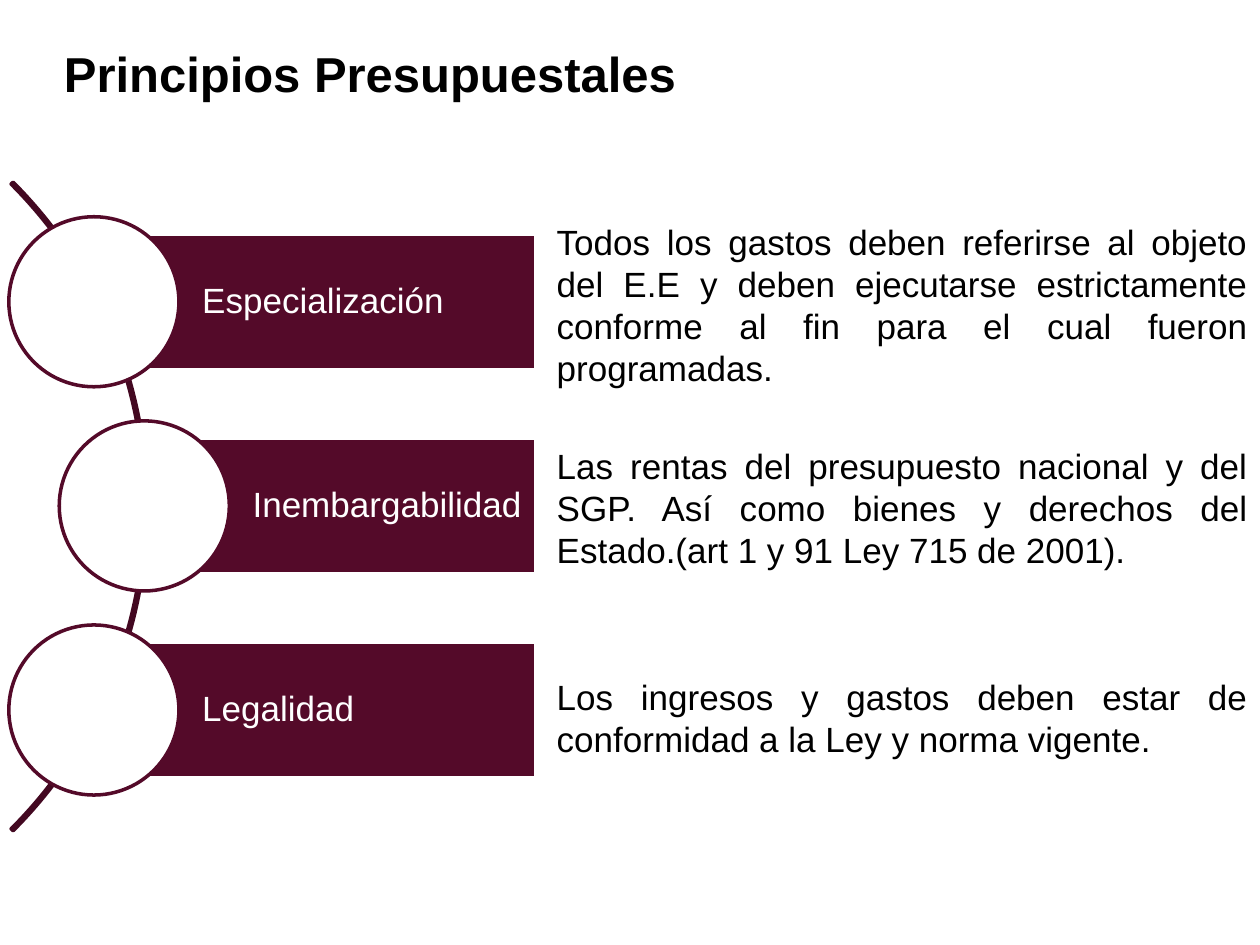
from pptx import Presentation
from pptx.dml.color import RGBColor
from pptx.enum.shapes import MSO_SHAPE
from pptx.enum.text import MSO_ANCHOR, PP_ALIGN
from pptx.util import Inches, Pt

ARC, RECT, OVAL = MSO_SHAPE.BLOCK_ARC, MSO_SHAPE.RECTANGLE, MSO_SHAPE.OVAL
MIDDLE, LEFT, JUSTIFY = MSO_ANCHOR.MIDDLE, PP_ALIGN.LEFT, PP_ALIGN.JUSTIFY

BLACK = RGBColor(0x00, 0x00, 0x00)
WHITE = RGBColor(0xFF, 0xFF, 0xFF)
WINE = RGBColor(0x54, 0x0A, 0x29)
DARK = RGBColor(0x43, 0x08, 0x21)

# Label, left of its circle, explanation, points before the explanation
ITEMS = [
    ("Especialización", 0.07,
     "Todos los gastos deben referirse al objeto del E.E y deben ejecutarse "
     "estrictamente conforme al fin para el cual fueron programadas.", 0),
    ("Inembargabilidad", 0.47,
     "Las rentas del presupuesto nacional y del SGP. Así como bienes y "
     "derechos del Estado.(art 1 y 91 Ley 715 de 2001).", 32),
    ("Legalidad", 0.07,
     "Los ingresos y gastos deben estar de conformidad a la Ley y norma "
     "vigente.", 60),
]
TOP, STEP = 1.72, 1.62
SIZE, HIGH, RIGHT = 1.35, 1.08, 4.25


def add_shape(kind, x, y, w, h, fill, line):
    shape = slide.shapes.add_shape(kind, Inches(x), Inches(y), Inches(w), Inches(h))
    shape.shadow.inherit = False
    if fill is None:
        shape.fill.background()
    else:
        shape.fill.solid()
        shape.fill.fore_color.rgb = fill
    shape.line.color.rgb = line
    shape.line.width = Pt(2)
    return shape


def set_font(para, size, color, bold=False):
    for run in para.runs:
        run.font.name = "Arial"
        run.font.size = Pt(size)
        run.font.color.rgb = color
        run.font.bold = bold


prs = Presentation()
prs.slide_width, prs.slide_height = Inches(10), Inches(7.5)
slide = prs.slides.add_slide(prs.slide_layouts[6])

# Title
title = slide.shapes.add_textbox(Inches(0.41), Inches(0.13), Inches(9), Inches(0.9))
frame = title.text_frame
frame.word_wrap = True
frame.vertical_anchor = MIDDLE
frame.text = "Principios Presupuestales"
set_font(frame.paragraphs[0], 28, BLACK, True)

# Explanations
notes = slide.shapes.add_textbox(Inches(4.32), Inches(1.7), Inches(5.68), Inches(4.48))
body = notes.text_frame
body.word_wrap = True
for i, (_, _, text, gap) in enumerate(ITEMS):
    para = body.add_paragraph() if i else body.paragraphs[0]
    para.text = text
    para.alignment = JUSTIFY
    para.line_spacing = Pt(24)
    para.space_before = Pt(gap)
    set_font(para, 20, BLACK)

# Curve behind the circles
curve = add_shape(ARC, -6.11, 0.38, 7.28, 7.28, None, DARK)
for i, value in enumerate((189, 27, 0.003)):
    curve.adjustments[i] = value

# Labelled bars, each starting at the middle of its circle
for i, (label, x, _, _) in enumerate(ITEMS):
    y = TOP + i * STEP
    start = x + SIZE / 2
    bar = add_shape(RECT, start, y + (SIZE - HIGH) / 2, RIGHT - start, HIGH, WINE, WHITE)
    frame = bar.text_frame
    frame.word_wrap = True
    frame.vertical_anchor = MIDDLE
    frame.margin_left = Inches(0.86)
    frame.margin_top = frame.margin_right = frame.margin_bottom = Inches(0.06)
    frame.text = label
    para = frame.paragraphs[0]
    para.alignment = LEFT
    para.line_spacing = 0.9
    set_font(para, 20, WHITE)
    add_shape(OVAL, x, y, SIZE, SIZE, WHITE, WINE)

prs.save("out.pptx")
